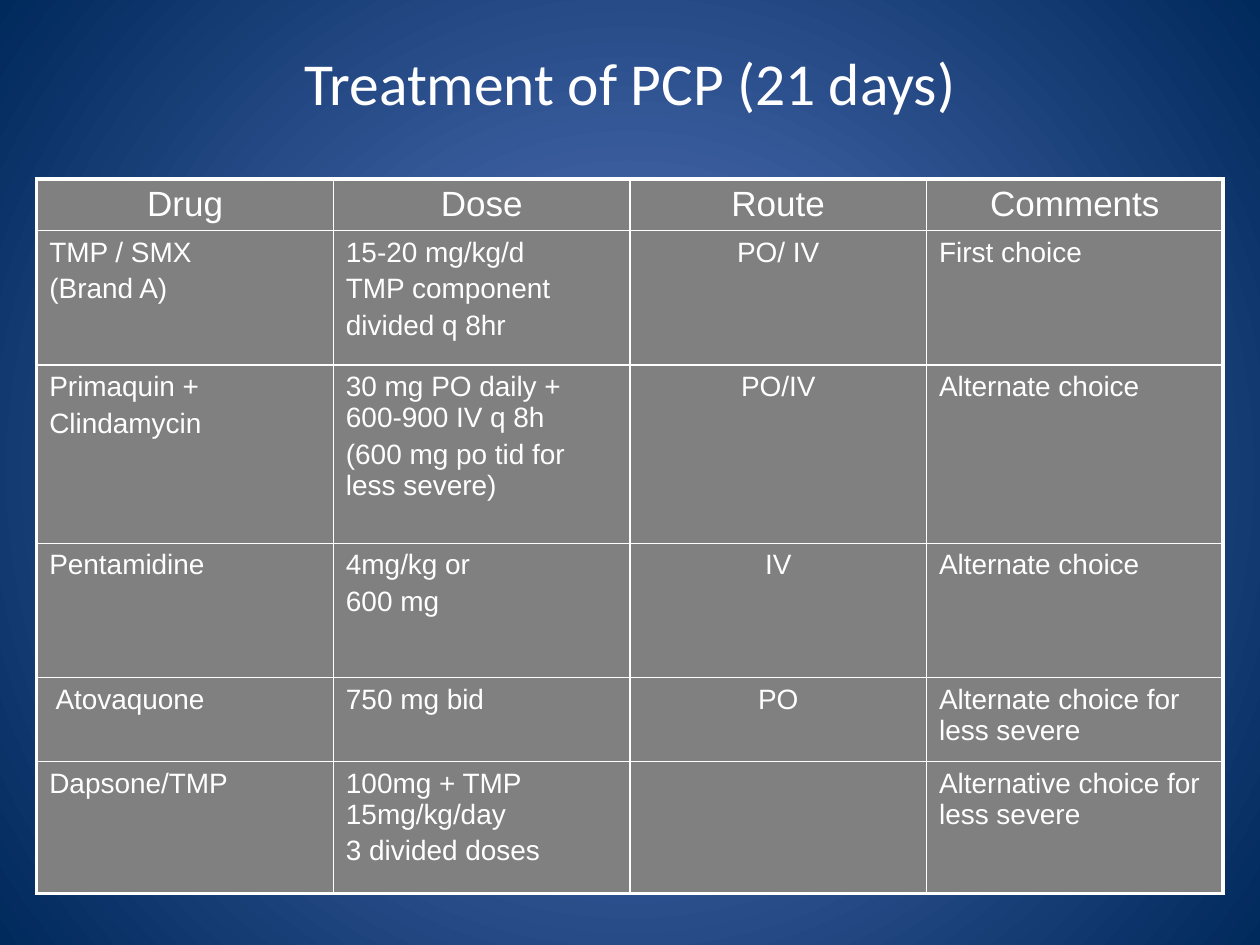
from lxml import etree
from pptx import Presentation
from pptx import util as u
from pptx.dml.color import RGBColor
from pptx.enum import text
from pptx.oxml import ns

THEME = {
    "white": RGBColor.from_string("FFFFFF"),
    "cell": RGBColor.from_string("808080"),
    "glow": [RGBColor.from_string("5E7CC5"), RGBColor.from_string("00295C")],
    "title": {"name": "Calibri", "size": u.Pt(34)},
    "head": {"name": "Arial", "size": u.Pt(20)},
    "body": {"name": "Arial", "size": u.Pt(16)},
    "outer": 2.25,
    "inner": 1,
}

HEADINGS = ["Drug", "Dose", "Route", "Comments"]
# Each line within a cell is a paragraph of its own
TREATMENTS = [
    ["TMP / SMX\n(Brand A)", "15-20 mg/kg/d\nTMP component\ndivided q 8hr",
     "PO/ IV", "First choice"],
    ["Primaquin +\nClindamycin",
     "30 mg PO daily + 600-900 IV q 8h\n(600 mg po tid for less severe)",
     "PO/IV", "Alternate choice"],
    ["Pentamidine", "4mg/kg or\n600 mg", "IV", "Alternate choice"],
    [" Atovaquone", "750 mg bid", "PO", "Alternate choice for less severe"],
    ["Dapsone/TMP", "100mg + TMP 15mg/kg/day\n3 divided doses", "",
     "Alternative choice for less severe"],
]
ROW_HEIGHTS = [29.5, 76.75, 102, 76.75, 48, 75.5]
COL_WIDTH = 169.5
ROUTE = HEADINGS.index("Route")


def write(p, words, style, align):
    """Fill a paragraph with one white run."""
    p.alignment = align
    r = p.add_run()
    r.text = words
    for key, value in {**style, "bold": False}.items():
        setattr(r.font, key, value)
    r.font.color.rgb = THEME["white"]


def add_border(cell, side, width):
    """Draw one white edge of a table cell."""
    tc_pr = cell._tc.get_or_add_tcPr()
    ln = etree.SubElement(tc_pr, ns.qn(f"a:ln{side}"), w=str(int(u.Pt(width))))
    fill = etree.SubElement(ln, ns.qn("a:solidFill"))
    etree.SubElement(fill, ns.qn("a:srgbClr"), val=str(THEME["white"]))


prs = Presentation()
prs.slide_width, prs.slide_height = u.Pt(720), u.Pt(540)
s = prs.slides.add_slide(prs.slide_layouts[5])

# Background: circular gradient from the centre
bg = s.background.fill
bg.gradient()
for stop, color, position in zip(bg.gradient_stops, THEME["glow"], (0, 1)):
    stop.color.rgb = color
    stop.position = position
lin = s.element.xpath(".//p:bg//a:lin")[0]
circle = etree.Element(ns.qn("a:path"), path="circle")
etree.SubElement(circle, ns.qn("a:fillToRect"),
                 {side: "50000" for side in "ltrb"})
lin.getparent().replace(lin, circle)

# Title
title = s.shapes.title
title.left, title.top, title.width, title.height = map(u.Pt, (36, 21.6, 648, 50.4))
tf = title.text_frame
tf.vertical_anchor = text.MSO_ANCHOR.MIDDLE
write(tf.paragraphs[0], "Treatment of PCP (21 days)", THEME["title"],
      text.PP_ALIGN.CENTER)

# Table grid
rows = [HEADINGS] + TREATMENTS
n_rows, n_cols = len(rows), len(HEADINGS)
table = s.shapes.add_table(n_rows, n_cols, u.Pt(21), u.Pt(102.25),
                           u.Pt(COL_WIDTH * n_cols),
                           u.Pt(sum(ROW_HEIGHTS))).table
table.first_row = table.horz_banding = False
for column in table.columns:
    column.width = u.Pt(COL_WIDTH)
for row, height in zip(table.rows, ROW_HEIGHTS):
    row.height = u.Pt(height)

# Cells: text, then borders, then fill
for i, row in enumerate(rows):
    style = THEME["body" if i else "head"]
    for j, words in enumerate(row):
        cell = table.cell(i, j)
        centred = i == 0 or j == ROUTE
        align = text.PP_ALIGN.CENTER if centred else text.PP_ALIGN.LEFT
        tf = cell.text_frame
        for k, line in enumerate(words.split("\n") if words else []):
            p = tf.add_paragraph() if k else tf.paragraphs[0]
            p.space_before = u.Pt(style["size"].pt * 0.2)
            write(p, line, style, align)
        edges = {"L": j == 0, "R": j == n_cols - 1,
                 "T": i == 0, "B": i == n_rows - 1}
        for side, is_outer in edges.items():
            add_border(cell, side, THEME["outer" if is_outer else "inner"])
        cell.fill.solid()
        cell.fill.fore_color.rgb = THEME["cell"]

prs.save("out.pptx")
